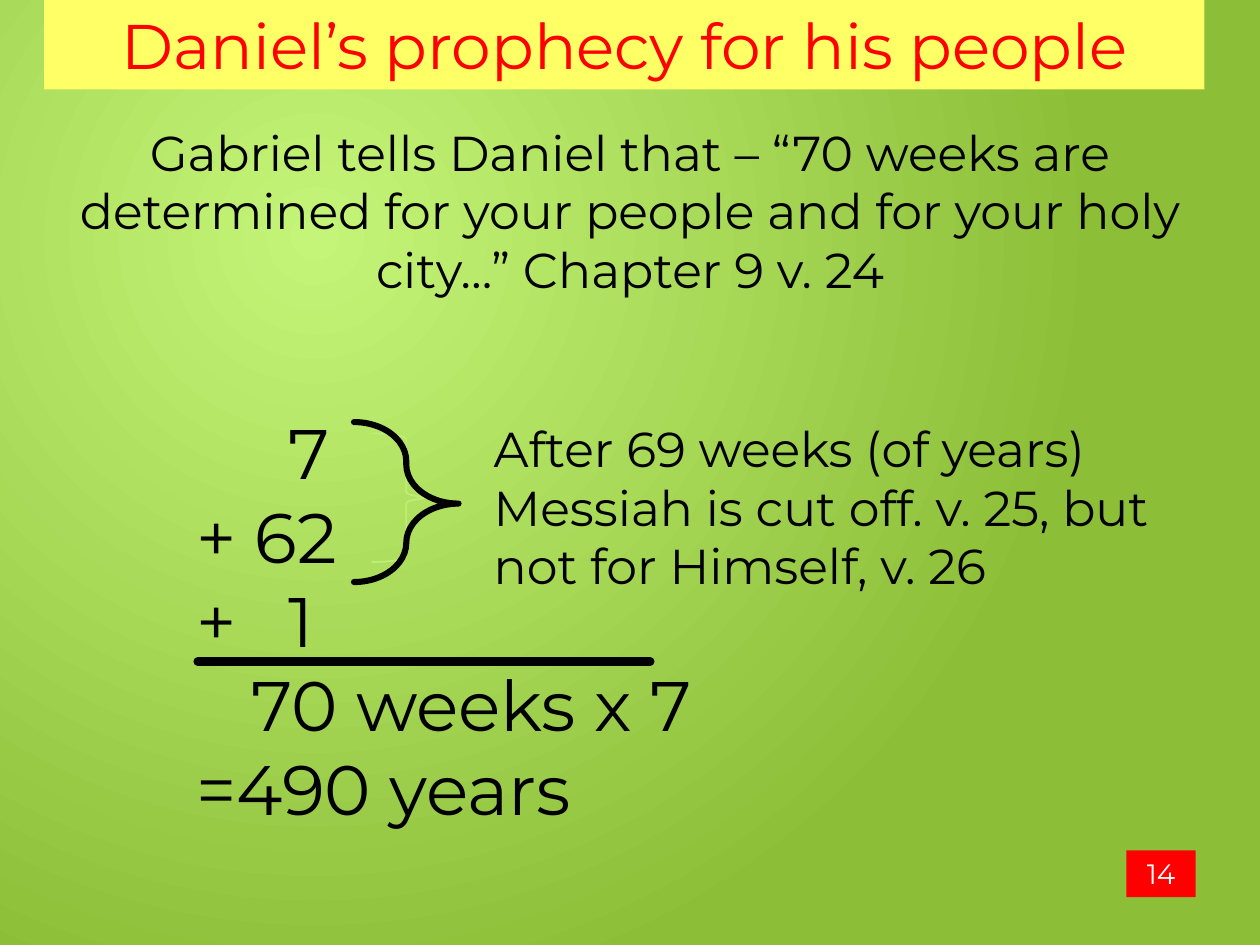
from dataclasses import dataclass
from typing import Optional

from lxml.etree import SubElement as Sub
from pptx import Presentation
from pptx.dml.color import RGBColor
from pptx.enum.shapes import MSO_CONNECTOR as Link, MSO_SHAPE as Kind
from pptx.enum.text import MSO_ANCHOR as Anchor, MSO_AUTO_SIZE as Fit, PP_ALIGN as Align
from pptx.oxml.ns import qn
from pptx.util import Inches, Pt

BLACK = RGBColor(0x00, 0x00, 0x00)
WHITE = RGBColor(0xFF, 0xFF, 0xFF)
RED = RGBColor(0xFF, 0x00, 0x00)
YELLOW = RGBColor(0xFF, 0xFF, 0x66)
LIME = RGBColor(0xC5, 0xF5, 0x78)
LEAF = RGBColor(0x8C, 0xBE, 0x38)
PALE = RGBColor(0xC1, 0xEC, 0x76)

COLS, ROWS = 100, 75
CELL = Inches(0.1)
FONT = "Montserrat"
FRAME = {"word_wrap": True, "auto_size": Fit.SHAPE_TO_FIT_TEXT, "vertical_anchor": Anchor.TOP}


@dataclass
class Row:
    text: str
    dent: float = 0
    tab: float = 0


@dataclass
class Block:
    box: tuple[float, float, float, float]
    rows: list[Row]
    size: int
    color: RGBColor = BLACK
    align: Align = Align.LEFT
    fill: Optional[RGBColor] = None


@dataclass
class Brace:
    box: tuple[float, float, float, float]
    color: RGBColor
    width: float
    bends: tuple[float, float] = (0.08, 0.5)


def cells(*spans: float) -> list[int]:
    return [round(span * CELL) for span in spans]


def assign(item, form: dict) -> None:
    for name, value in form.items():
        setattr(item, name, value)


def paint(slide) -> None:
    fill = slide.background.fill
    fill.gradient()
    for stop, color, place in zip(fill.gradient_stops, (LIME, LEAF), (0, 1)):
        stop.color.rgb = color
        stop.position = place
    grad = slide.element.find(".//" + qn("a:gradFill"))
    grad.remove(grad.find(qn("a:lin")))
    ring = Sub(grad, qn("a:path"), {"path": "circle"})
    Sub(ring, qn("a:fillToRect"), {"l": "50000", "t": "50000", "r": "100000", "b": "100000"})


def write(slide, block: Block) -> None:
    if block.fill is None:
        shape = slide.shapes.add_textbox(*cells(*block.box))
    else:
        shape = slide.shapes.add_shape(Kind.RECTANGLE, *cells(*block.box))
        shape.shadow.inherit = False
        shape.fill.solid()
        shape.fill.fore_color.rgb = block.fill
        shape.line.fill.background()
    frame = shape.text_frame
    assign(frame, FRAME)
    for i, row in enumerate(block.rows):
        para = frame.add_paragraph() if i else frame.paragraphs[0]
        para.alignment = block.align
        run = para.add_run()
        run.text = row.text
        assign(run.font, {"name": FONT, "size": Pt(block.size)})
        run.font.color.rgb = block.color
        props = para._p.get_or_add_pPr()
        if row.dent:
            props.set("marL", str(cells(row.dent)[0]))
            props.set("indent", "0")
        if row.tab:
            stops = Sub(props, qn("a:tabLst"))
            Sub(stops, qn("a:tab"), {"pos": str(cells(row.tab)[0]), "algn": "l"})


def stroke(shape, color: RGBColor, width: float) -> None:
    shape.line.color.rgb = color
    shape.line.width = Pt(width)
    shape.line._get_or_add_ln().set("cap", "rnd")


def hook(slide, brace: Brace) -> None:
    shape = slide.shapes.add_shape(Kind.RIGHT_BRACE, *cells(*brace.box))
    shape.shadow.inherit = False
    shape.fill.background()
    for i, bend in enumerate(brace.bends):
        shape.adjustments[i] = bend
    stroke(shape, brace.color, brace.width)


def rule(slide, left: float, right: float, top: float, width: float) -> None:
    line = slide.shapes.add_connector(Link.STRAIGHT, *cells(left, top, right, top))
    stroke(line, BLACK, width)
    Sub(line._element.spPr, qn("a:effectLst"))


TITLE = Block((3.5, 0, 92.1, 7.1), [Row("Daniel’s prophecy for his people")],
              36, RED, Align.CENTER, YELLOW)
QUOTE = Block((0, 9.2, COLS, 15.1), [Row(
    "Gabriel tells Daniel that – “70 weeks are determined for your people "
    "and for your holy city…” Chapter 9 v. 24")], 28, align=Align.CENTER)
SUM = Block((14.6, 32, 53.2, 34.7), [
    Row("7", dent=7.3),
    Row("+ 62"),
    Row("+\t1", tab=7.3),
    Row("70 weeks x 7", dent=4.4),
    Row("=490 years"),
], 40)
NOTE = Block((38.2, 32.7, 59.1, 15.1), [Row(
    "After 69 weeks (of years) Messiah is cut off. v. 25, but not for Himself, v. 26")], 28)
PAGE = Block((89.4, 67.5, 5.5, 3.7), [Row("14")], 16, WHITE, Align.CENTER, RED)
BRACES = [
    Brace((29.5, 34.4, 5.5, 10.2), PALE, 1),
    Brace((28.1, 33.5, 8.3, 12.7), BLACK, 3.5, (0.42, 0.51)),
]


def main() -> None:
    deck = Presentation()
    assign(deck, {"slide_width": COLS * CELL, "slide_height": ROWS * CELL})
    slide = deck.slides.add_slide(deck.slide_layouts[6])
    paint(slide)
    for block in (TITLE, QUOTE, SUM):
        write(slide, block)
    rule(slide, 15.7, 51.6, 52.5, 5)
    write(slide, NOTE)
    for brace in BRACES:
        hook(slide, brace)
    write(slide, PAGE)
    deck.save("out.pptx")


if __name__ == "__main__":
    main()
